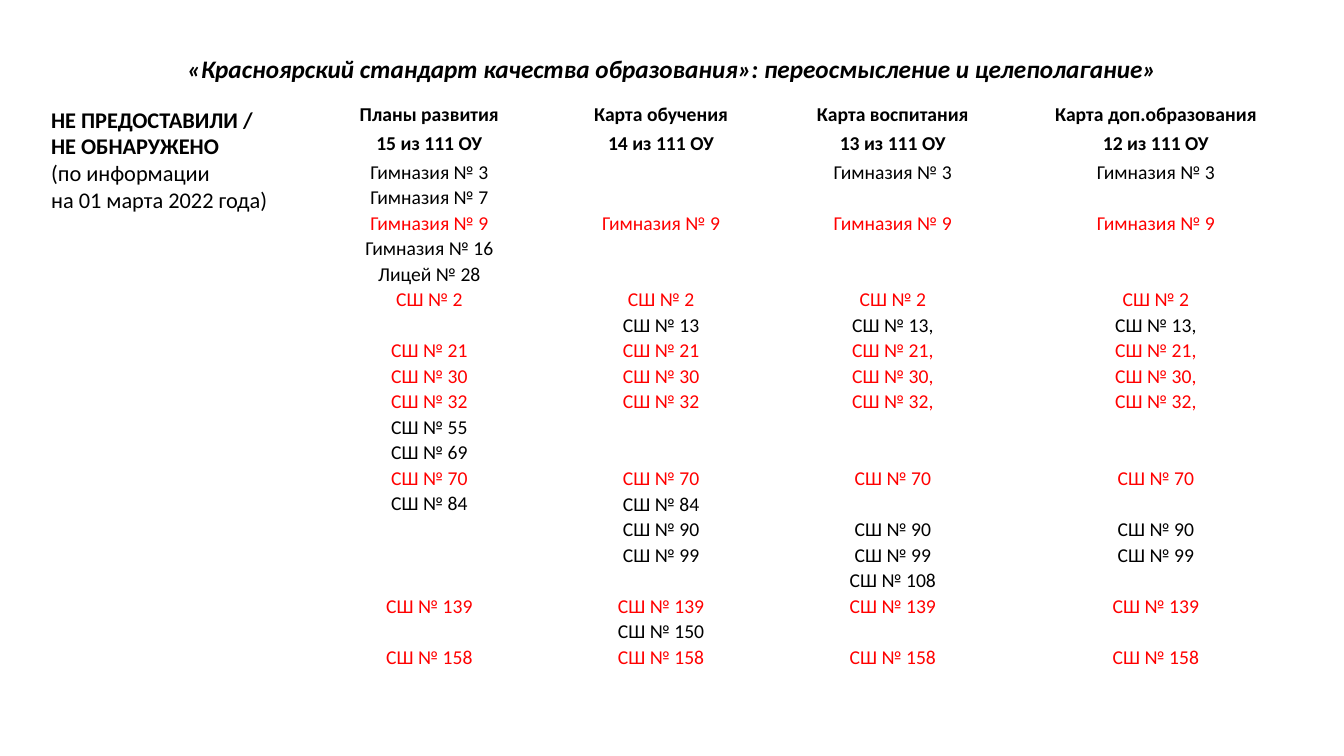
from pptx import Presentation
from pptx.dml.color import RGBColor
from pptx.enum.text import MSO_ANCHOR, PP_ALIGN
from pptx.util import Cm, Pt

CENTER, LEFT = PP_ALIGN.CENTER, PP_ALIGN.LEFT
MIDDLE, TOP = MSO_ANCHOR.MIDDLE, MSO_ANCHOR.TOP
BLACK = RGBColor(0, 0, 0)
RED = RGBColor(255, 0, 0)

TITLE = "«Красноярский стандарт качества образования»: переосмысление и целеполагание»"
NOTE = [
    ("НЕ ПРЕДОСТАВИЛИ /", True),
    ("НЕ ОБНАРУЖЕНО", True),
    ("(по информации", False),
    ("на 01 марта 2022 года)", False),
]
SCHOOLS = [
    "Гимназия № 3", "Гимназия № 7", "Гимназия № 9", "Гимназия № 16", "Лицей № 28",
    "СШ № 2", "СШ № 13", "СШ № 21", "СШ № 30", "СШ № 32", "СШ № 55", "СШ № 69",
    "СШ № 70", "СШ № 84", "СШ № 90", "СШ № 99", "СШ № 108", "СШ № 139",
    "СШ № 150", "СШ № 158",
]
COLUMNS = [
    ("Планы развития", "15 из 111 ОУ", 5.84,
     ["Гимназия № 3", "Гимназия № 7", "Гимназия № 9", "Гимназия № 16", "Лицей № 28",
      "СШ № 2", "СШ № 21", "СШ № 30", "СШ № 32", "СШ № 55", "СШ № 69", "СШ № 70",
      "СШ № 84", "СШ № 139", "СШ № 158"]),
    ("Карта обучения", "14 из 111 ОУ", 5.84,
     ["Гимназия № 9", "СШ № 2", "СШ № 13", "СШ № 21", "СШ № 30", "СШ № 32", "СШ № 70",
      "СШ № 84", "СШ № 90", "СШ № 99", "СШ № 139", "СШ № 150", "СШ № 158"]),
    ("Карта воспитания", "13 из 111 ОУ", 5.84,
     ["Гимназия № 3", "Гимназия № 9", "СШ № 2", "СШ № 13,", "СШ № 21,", "СШ № 30,",
      "СШ № 32,", "СШ № 70", "СШ № 90", "СШ № 99", "СШ № 108", "СШ № 139", "СШ № 158"]),
    ("Карта доп.образования", "12 из 111 ОУ", 7.42,
     ["Гимназия № 3", "Гимназия № 9", "СШ № 2", "СШ № 13,", "СШ № 21,", "СШ № 30,",
      "СШ № 32,", "СШ № 70", "СШ № 90", "СШ № 99", "СШ № 139", "СШ № 158"]),
]
ROW_HEIGHTS = [0.73, 0.73, 14.45]
TABLE_SIZE, TABLE_SPACING = 14, 1.07
LINE_PITCH = TABLE_SIZE * 1.22 * TABLE_SPACING


def add_run(p, text, size, color=BLACK, **extra):
    r = p.add_run()
    r.text = text
    for name, value in {"name": "Calibri", "size": Pt(size), **extra}.items():
        setattr(r.font, name, value)
    r.font.color.rgb = color


def add_box(s, left, top, width, height, anchor, align):
    tf = s.shapes.add_textbox(Cm(left), Cm(top), Cm(width), Cm(height)).text_frame
    tf.word_wrap = True
    tf.vertical_anchor = anchor
    p = tf.paragraphs[0]
    p.alignment = align
    return p


def add_line(p, text, color=BLACK, bold=False):
    p.alignment = CENTER
    p.line_spacing = TABLE_SPACING
    add_run(p, text, TABLE_SIZE, color, bold=bold)


def fill_schools(cell, names, shared):
    tf = cell.text_frame
    expected = 0
    for i, name in enumerate(names):
        school = name.rstrip(",")
        row = SCHOOLS.index(school)
        gap = Pt((row - expected) * LINE_PITCH)
        if i == 0:
            p = tf.paragraphs[0]
            cell.margin_top = gap
        else:
            p = tf.add_paragraph()
            p.space_before = gap
        add_line(p, name, RED if school in shared else BLACK)
        expected = row + 1


def add_school_table(s):
    widths = [column[2] for column in COLUMNS]
    table = s.shapes.add_table(
        len(ROW_HEIGHTS), len(COLUMNS), Cm(7.9), Cm(2.54),
        Cm(sum(widths)), Cm(sum(ROW_HEIGHTS))).table
    table.first_row = table.horz_banding = False
    for row, height in zip(table.rows, ROW_HEIGHTS):
        row.height = Cm(height)
    for cell in table.iter_cells():
        cell.fill.background()
        cell.margin_left = cell.margin_right = Cm(0.19)
        cell.margin_top = cell.margin_bottom = 0
    shared = set.intersection(*({n.rstrip(",") for n in c[3]} for c in COLUMNS))
    for j, (heading, count, width, names) in enumerate(COLUMNS):
        table.columns[j].width = Cm(width)
        for i, text in enumerate((heading, count)):
            add_line(table.cell(i, j).text_frame.paragraphs[0], text, bold=True)
        fill_schools(table.cell(2, j), names, shared)


def main():
    prs = Presentation()
    prs.slide_width, prs.slide_height = Cm(33.87), Cm(19.05)
    s = prs.slides.add_slide(prs.slide_layouts[6])

    p = add_box(s, 1.04, 1.02, 31.8, 1.52, MIDDLE, CENTER)
    p.line_spacing = 0.9
    add_run(p, TITLE, 18, bold=True, italic=True)

    p = add_box(s, 1.04, 2.54, 7.98, 3, TOP, LEFT)
    for i, (text, bold) in enumerate(NOTE):
        if i:
            p.add_line_break()
        add_run(p, text, 16, bold=bold)

    add_school_table(s)
    prs.save("out.pptx")


if __name__ == "__main__":
    main()
